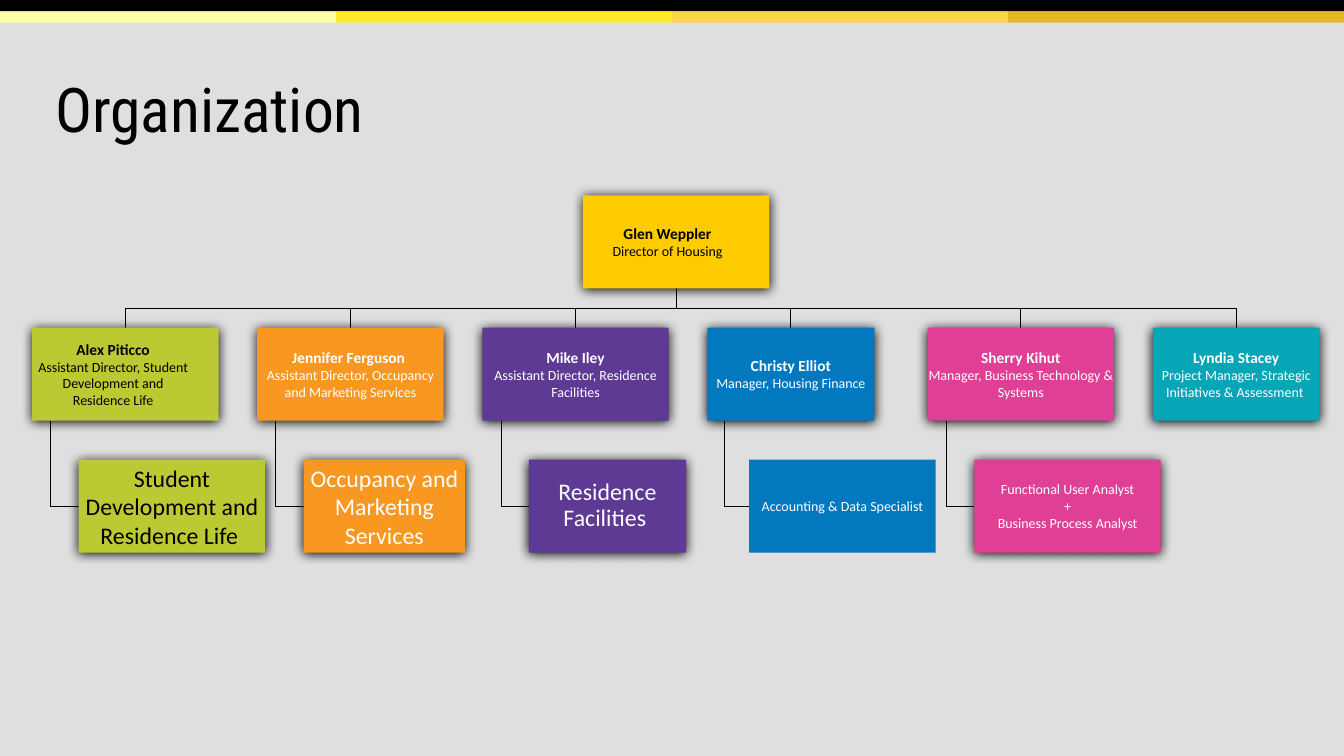
from dataclasses import dataclass

from lxml.etree import SubElement as Sub
from pptx import Presentation as Deck
from pptx.dml.color import RGBColor as Rgb
from pptx.enum.shapes import MSO_SHAPE as Geo
from pptx.enum.text import MSO_ANCHOR as Anchor, PP_ALIGN as Align
from pptx.oxml.ns import qn
from pptx.util import Pt


@dataclass(frozen=True)
class Theme:
    back: str = "DFDFDF"
    black: str = "000000"
    white: str = "FFFFFF"
    gold: str = "FECB00"
    lime: str = "BBCA32"
    orange: str = "F89820"
    purple: str = "5F3A95"
    blue: str = "0278BE"
    pink: str = "E03F96"
    teal: str = "06A6B7"
    bands: tuple = ("FFFFAA", "FFEA29", "FFD54F", "E4B429")
    head: str = "Roboto Condensed"
    body: str = "Calibri"
    title: int = 44
    unit: int = 17
    name: int = 11
    role: int = 10


class Chart:
    def __init__(self, slide, theme):
        self.slide, self.theme = slide, theme
        self.shapes = slide.shapes
        fill = slide.background.fill
        fill.solid()
        fill.fore_color.rgb = Rgb.from_string(theme.back)

    def bar(self, x, y, w, h, color):
        """Plain filled rectangle."""
        shape = self.shapes.add_shape(Geo.RECTANGLE, Pt(x), Pt(y), Pt(w), Pt(h))
        shape.shadow.inherit = False
        shape.fill.solid()
        shape.fill.fore_color.rgb = Rgb.from_string(color)
        shape.line.fill.background()
        return shape

    def glow(self, shape):
        """Soft dark shadow just below the shape."""
        effects = shape._element.spPr.find(qn("a:effectLst"))
        outer = Sub(effects, qn("a:outerShdw"), blurRad=str(Pt(8.5)),
                    dist=str(Pt(1)), dir="5400000", algn="ctr", rotWithShape="0")
        tone = Sub(outer, qn("a:srgbClr"), val=self.theme.black)
        Sub(tone, qn("a:alpha"), val="100000")

    def label(self, para, text, size, color, face, bold=False):
        run = para.add_run()
        run.text = text
        font = run.font
        font.name, font.size, font.bold = face, Pt(size), bold
        font.color.rgb = Rgb.from_string(color)

    def card(self, x, y, w, h, color, ink, lines, glow=True, space=1.0, shift=0):
        """Box with centred lines of (text, size, bold); shift is the first line's right margin."""
        shape = self.bar(x, y, w, h, color)
        if glow:
            self.glow(shape)
        frame = shape.text_frame
        frame.word_wrap = True
        frame.vertical_anchor = Anchor.MIDDLE
        frame.margin_left = frame.margin_right = Pt(0.6)
        frame.margin_top = frame.margin_bottom = Pt(0.6)
        for i, (text, size, bold) in enumerate(lines):
            para = frame.add_paragraph() if i else frame.paragraphs[0]
            para.alignment = Align.CENTER
            para.line_spacing = space
            if shift and not i:
                para._p.get_or_add_pPr().set("marR", str(Pt(shift)))
            self.label(para, text, size, ink, self.theme.body, bold)

    def link(self, *points):
        """Thin bent line through the points."""
        start, *rest = [(Pt(x), Pt(y)) for x, y in points]
        form = self.shapes.build_freeform(*start)
        form.add_line_segments(rest, close=False)
        shape = form.convert_to_shape()
        shape.shadow.inherit = False
        shape.fill.background()
        shape.line.color.rgb = Rgb.from_string(self.theme.black)
        shape.line.width = Pt(0.5)

    def title(self, text, x, y, w, h):
        frame = self.shapes.add_textbox(Pt(x), Pt(y), Pt(w), Pt(h)).text_frame
        frame.word_wrap = True
        para = frame.paragraphs[0]
        para.line_spacing = 0.9
        self.label(para, text, self.theme.title, self.theme.black, self.theme.head)


def main():
    look = Theme()
    deck = Deck()
    deck.slide_width, deck.slide_height = Pt(960), Pt(540)
    chart = Chart(deck.slides.add_slide(deck.slide_layouts[6]), look)

    # Top stripes
    chart.bar(0, 0, 960, 8.2, look.black)
    for i, color in enumerate(look.bands):
        chart.bar(240 * i, 8.2, 240, 7.9, color)

    chart.title("Organization", 32.4, 53.3, 828, 43.2)

    # Levels of the tree
    wide, slim, tall = 133.2, 119.2, 66.5
    top, mid, low = 139.5, 234, 328.3
    boss = 416.4
    hub, bus = boss + wide / 2, (top + tall + mid) / 2

    # Left, width, fill, ink, name, role, name shift, team
    # Team: width, lines, size, shadow, line spacing
    staff = [
        (22.9, wide, look.lime, look.black, "Alex Piticco",
         "Assistant Director, Student Development and Residence Life", 17.4,
         (wide, ["Student Development and Residence Life "], look.unit, True, 1.0)),
        (183.7, wide, look.orange, look.white, "Jennifer Ferguson ",
         "Assistant Director, Occupancy and Marketing Services", 0,
         (115.2, ["Occupancy and Marketing Services"], look.unit, True, 1.0)),
        (344.5, wide, look.purple, look.white, "Mike Iley",
         "Assistant Director, Residence Facilities", 0,
         (112.3, ["Residence Facilities "], look.unit, True, 0.9)),
        (505.3, slim, look.blue, look.white, "Christy Elliot",
         "Manager, Housing Finance", 0,
         (wide, ["Accounting & Data Specialist"], look.role, False, 1.0)),
        (662.6, wide, look.pink, look.white, "Sherry Kihut",
         "Manager, Business Technology & Systems", 0,
         (wide, ["Functional User Analyst", "+", "Business Process Analyst"],
          look.role, True, 1.0)),
        (823.5, slim, look.teal, look.white, "Lyndia Stacey",
         "Project Manager, Strategic Initiatives & Assessment ", 0, None),
    ]

    # Links, behind the cards
    for x, w, *_, team in staff:
        chart.link((hub, top + tall), (hub, bus), (x + w / 2, bus), (x + w / 2, mid))
        if team:
            stem, turn = x + w / 10, low + tall / 2
            chart.link((stem, mid + tall), (stem, turn), (x + w / 4, turn))

    # Director
    chart.card(boss, top, wide, tall, look.gold, look.black,
               [("Glen Weppler", look.name, True),
                ("Director of Housing", look.role, False)], shift=12.4)

    # Managers and their teams
    for x, w, color, ink, name, role, shift, team in staff:
        chart.card(x, mid, w, tall, color, ink,
                   [(name, look.name, True), (role, look.role, False)], shift=shift)
        if team:
            span, lines, size, glow, space = team
            chart.card(x + w / 4, low, span, tall, color, ink,
                       [(line, size, False) for line in lines], glow, space)

    deck.save("out.pptx")


if __name__ == "__main__":
    main()
